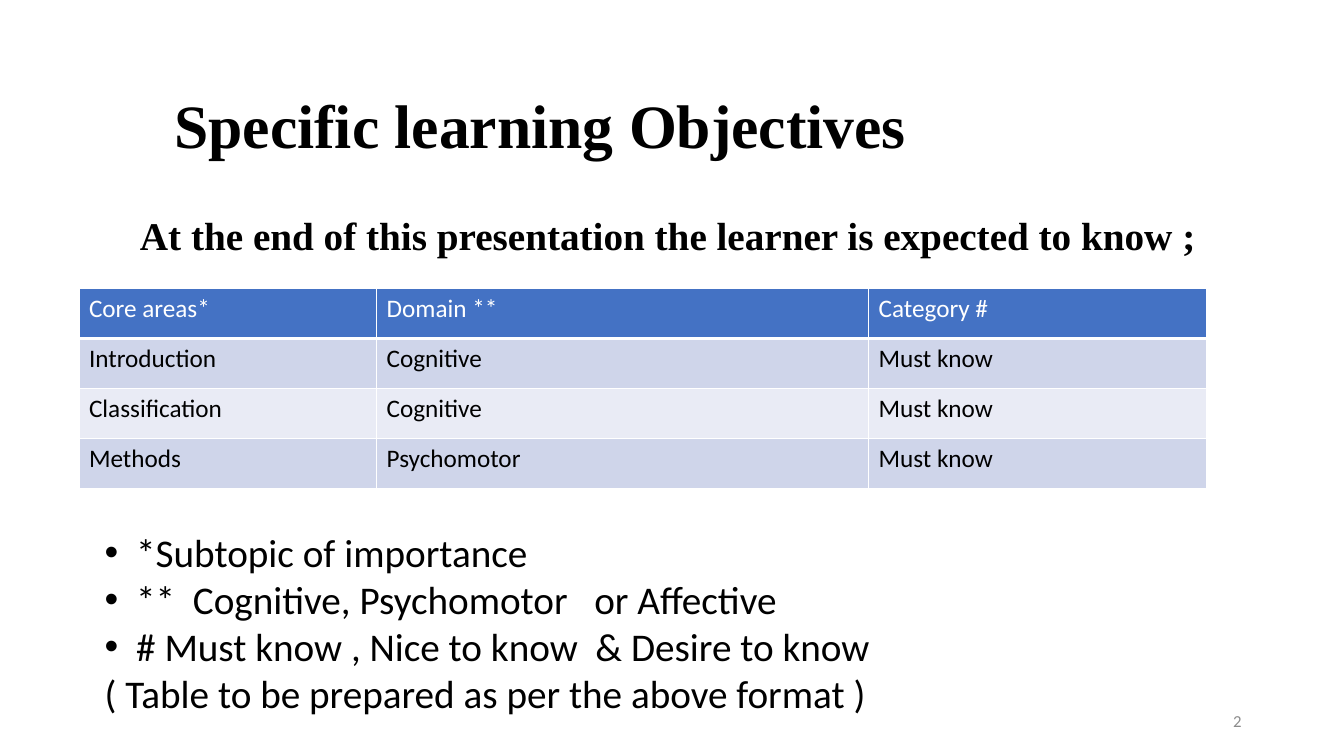
"""Build the slide on specific learning objectives."""
from lxml.etree import SubElement
from pptx import Presentation
from pptx.dml.color import RGBColor
from pptx.enum.text import MSO_ANCHOR, PP_ALIGN
from pptx.oxml.ns import qn
from pptx.util import Pt

BLACK = RGBColor(0x00, 0x00, 0x00)
WHITE = RGBColor(0xFF, 0xFF, 0xFF)
GREY = RGBColor(0x8C, 0x8C, 0x8C)
HEADER_BLUE = RGBColor(0x44, 0x72, 0xC4)
BAND_DARK = RGBColor(0xCF, 0xD5, 0xEA)
BAND_LIGHT = RGBColor(0xE9, 0xEB, 0xF5)
SERIF = "Times New Roman"
SANS = "Calibri"


def add_span(para, text, size, font=SANS, color=BLACK, bold=False):
    span = para.add_run()
    span.text = text
    span.font.size = Pt(size)
    span.font.name = font
    span.font.color.rgb = color
    span.font.bold = bold


def add_box(page, left, top, width, height, anchor=MSO_ANCHOR.TOP):
    box = page.shapes.add_textbox(Pt(left), Pt(top), Pt(width), Pt(height))
    box.text_frame.word_wrap = True
    box.text_frame.vertical_anchor = anchor
    return box.text_frame


deck = Presentation()
deck.slide_width = Pt(960)
deck.slide_height = Pt(540)
page = deck.slides.add_slide(deck.slide_layouts[6])

title = add_box(page, 117.4, 48.2, 729.4, 87.1, MSO_ANCHOR.MIDDLE).paragraphs[0]
title.line_spacing = 0.9
add_span(title, "Specific learning Objectives", 44, SERIF, bold=True)

rows = [
    ("Core areas*", "Domain **", "Category #"),
    ("Introduction", "Cognitive", "Must know"),
    ("Classification", "Cognitive", "Must know"),
    ("Methods", "Psychomotor", "Must know"),
]
column_widths = (212.6, 351.4, 241.8)
row_height = 35.8
table = page.shapes.add_table(
    len(rows), len(column_widths), Pt(56.4), Pt(206),
    Pt(sum(column_widths)), Pt(row_height * len(rows))).table
for column, width in zip(table.columns, column_widths):
    column.width = Pt(width)
for row_index, labels in enumerate(rows):
    table.rows[row_index].height = Pt(row_height)
    is_header = row_index == 0
    band = BAND_DARK if row_index % 2 else BAND_LIGHT
    for column_index, label in enumerate(labels):
        cell = table.cell(row_index, column_index)
        properties = cell._tc.get_or_add_tcPr()
        for side in ("lnL", "lnR", "lnT", "lnB"):
            weight = 3 if is_header and side == "lnB" else 1
            border = SubElement(properties, qn(f"a:{side}"), w=str(Pt(weight)))
            line_fill = SubElement(border, qn("a:solidFill"))
            SubElement(line_fill, qn("a:srgbClr"), val=str(WHITE))
        cell.fill.solid()
        cell.fill.fore_color.rgb = HEADER_BLUE if is_header else band
        add_span(cell.text_frame.paragraphs[0], label, 18,
                 color=WHITE if is_header else BLACK)

notes = [
    ("*Subtopic of importance", True),
    ("**  Cognitive, Psychomotor   or Affective", True),
    ("# Must know , Nice to know  & Desire to know", True),
    ("( Table to be prepared as per the above format )", False),
]
legend = add_box(page, 67.7, 373.7, 652.3, 143.3)
for index, (text, bulleted) in enumerate(notes):
    para = legend.add_paragraph() if index else legend.paragraphs[0]
    if bulleted:
        properties = para._p.get_or_add_pPr()
        properties.set("marL", str(Pt(22.5)))
        properties.set("indent", str(Pt(-22.5)))
        SubElement(properties, qn("a:buFont"), typeface="Arial")
        SubElement(properties, qn("a:buChar"), char="•")
    add_span(para, text, 28)

lead = add_box(page, 92.9, 147.6, 771.1, 41).paragraphs[0]
add_span(lead, "At the end of this presentation the learner is expected to know ;",
         28, SERIF, bold=True)

number = add_box(page, 678, 500.5, 216, 28.75, MSO_ANCHOR.MIDDLE).paragraphs[0]
number.alignment = PP_ALIGN.RIGHT
add_span(number, "2", 12, color=GREY)

deck.save("out.pptx")
